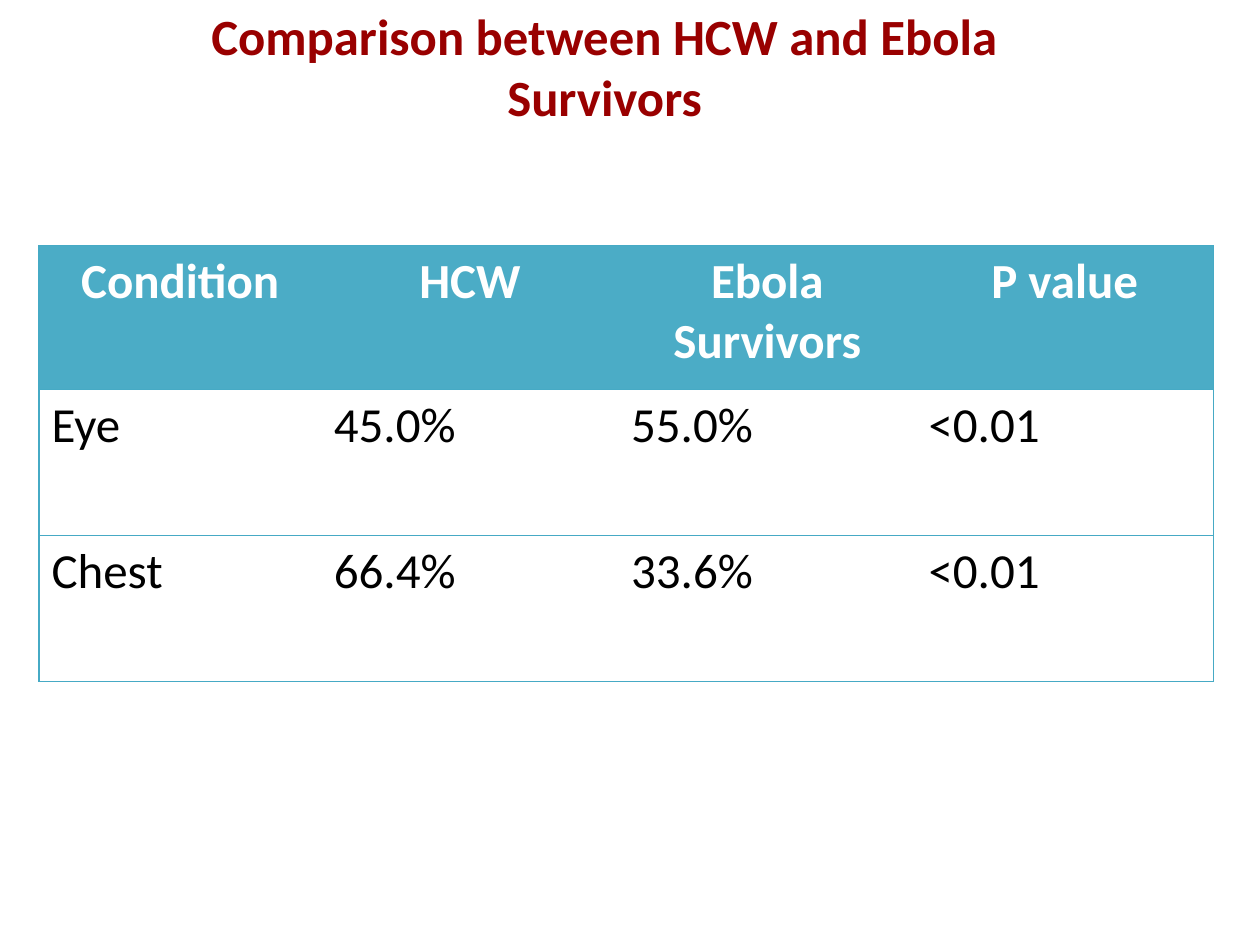
from typing import NamedTuple

import pptx
import pptx.dml.color
import pptx.enum.text
import pptx.oxml.ns
import pptx.util
from lxml import etree
from pptx.util import Inches

COLORS = {
    "title": "990000",
    "header": "4BACC6",
    "border": "46AAC5",
    "white": "FFFFFF",
    "black": "000000",
}
FONT = "Calibri"
BORDER_PT = 0.75
PP_ALIGN = pptx.enum.text.PP_ALIGN
MSO_ANCHOR = pptx.enum.text.MSO_ANCHOR


class ConditionRow(NamedTuple):
    condition: str
    hcw: str
    survivors: str
    p_value: str


ROWS = [
    ConditionRow("Condition", "HCW", "Ebola Survivors", "P value"),
    ConditionRow("Eye", "45.0%", "55.0%", "<0.01"),
    ConditionRow("Chest", "66.4%", "33.6%", "<0.01"),
]
COL_WIDTHS = [2.24, 2.36, 2.36, 2.36]
ROW_HEIGHTS = [1.14, 1.16, 1.16]


def rgb(name: str) -> pptx.dml.color.RGBColor:
    return pptx.dml.color.RGBColor.from_string(COLORS[name])


def write_text(tf, text: str, *, size: float, color: str, bold: bool = False,
               align=PP_ALIGN.LEFT) -> None:
    p = tf.paragraphs[0]
    p.alignment = align
    r = p.add_run()
    r.text = text
    r.font.name = FONT
    r.font.size = pptx.util.Pt(size)
    r.font.bold = bold
    r.font.color.rgb = rgb(color)


def set_borders(cell, visible: str) -> None:
    """Draw the sides named in visible (letters of LRTB) and hide the others."""
    qn = pptx.oxml.ns.qn
    tc_pr = cell._tc.get_or_add_tcPr()
    for i, side in enumerate("LRTB"):
        ln = etree.Element(qn(f"a:ln{side}"))
        tc_pr.insert(i, ln)  # borders must come before the cell fill
        if side in visible:
            ln.set("w", str(int(pptx.util.Pt(BORDER_PT))))
            fill = etree.SubElement(ln, qn("a:solidFill"))
            etree.SubElement(fill, qn("a:srgbClr"), val=COLORS["border"])
        else:
            etree.SubElement(ln, qn("a:noFill"))


def add_title(s, text: str) -> None:
    title = s.shapes.title
    title.left, title.top = Inches(0.9), Inches(0.13)
    title.width, title.height = Inches(7.8), Inches(0.79)
    tf = title.text_frame
    tf.word_wrap = True
    tf.auto_size = pptx.enum.text.MSO_AUTO_SIZE.NONE
    tf.vertical_anchor = MSO_ANCHOR.MIDDLE
    write_text(tf, text, size=29, color="title", bold=True,
               align=PP_ALIGN.CENTER)


def add_comparison_table(s, rows: list[ConditionRow]) -> None:
    table = s.shapes.add_table(
        len(rows), len(COL_WIDTHS), Inches(0.31), Inches(1.95),
        Inches(sum(COL_WIDTHS)), Inches(sum(ROW_HEIGHTS))).table
    table.horz_banding = False
    for column, width in zip(table.columns, COL_WIDTHS):
        column.width = Inches(width)
    for row, height in zip(table.rows, ROW_HEIGHTS):
        row.height = Inches(height)

    last_col = len(COL_WIDTHS) - 1
    for i, row in enumerate(rows):
        header = i == 0
        for j, text in enumerate(row):
            cell = table.cell(i, j)
            cell.vertical_anchor = MSO_ANCHOR.TOP
            if header:
                cell.fill.solid()
                cell.fill.fore_color.rgb = rgb("header")
            else:
                cell.fill.background()
            write_text(cell.text_frame, text, size=28, bold=header,
                       color="white" if header else "black",
                       align=PP_ALIGN.CENTER if header else PP_ALIGN.LEFT)
            sides = {0: "LTB", last_col: "RTB"}
            set_borders(cell, sides.get(j, "TB"))


def main() -> None:
    prs = pptx.Presentation()
    prs.slide_width, prs.slide_height = Inches(10), Inches(7.5)
    s = prs.slides.add_slide(prs.slide_layouts.get_by_name("Title Only"))
    s.background.fill.solid()
    s.background.fill.fore_color.rgb = rgb("white")
    add_title(s, "Comparison between HCW and Ebola Survivors")
    add_comparison_table(s, ROWS)
    prs.save("out.pptx")


if __name__ == "__main__":
    main()
